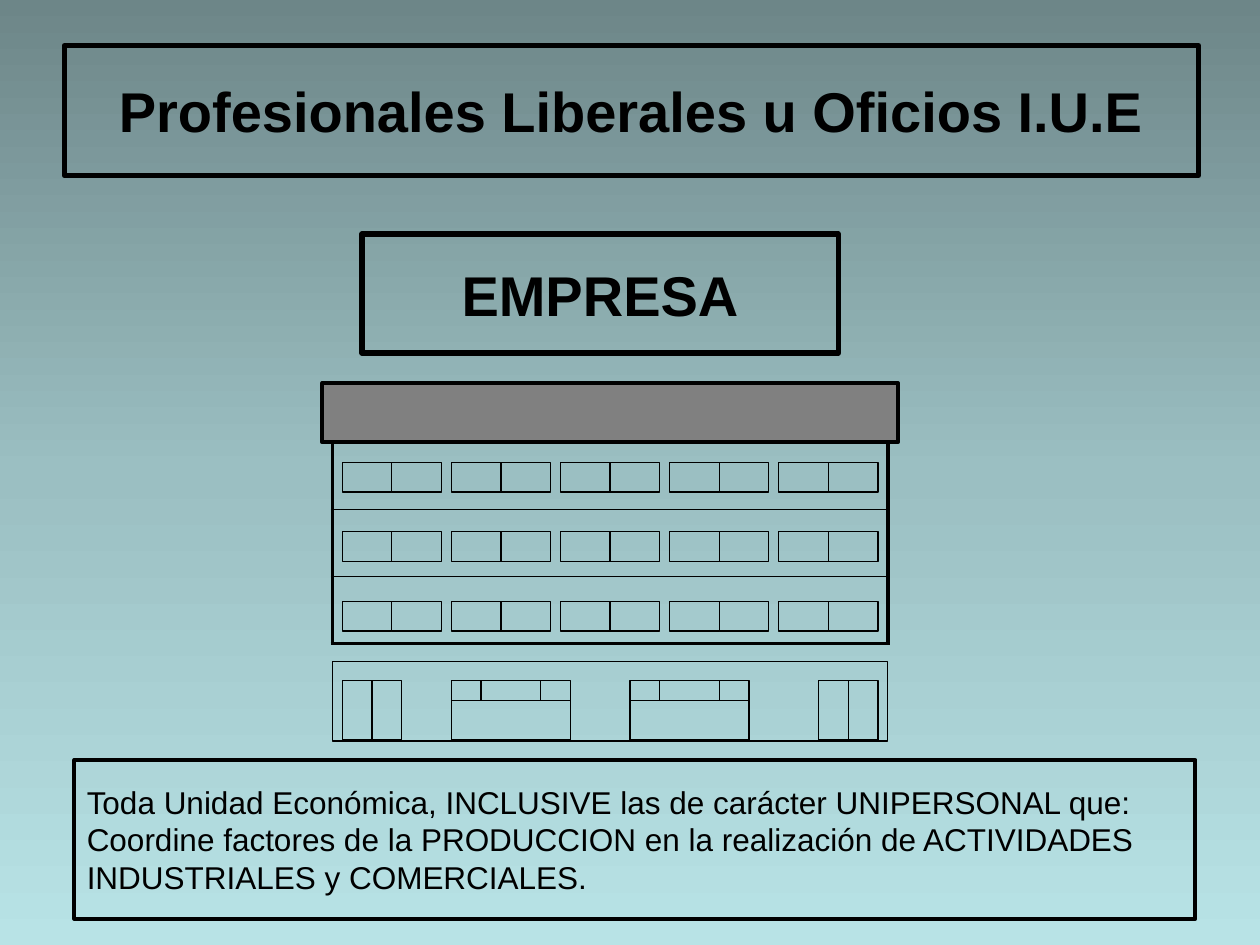
"""Build a slide that defines a company, with a drawn office building."""
import copy

import pptx
import pptx.dml.color
import pptx.enum.shapes
import pptx.enum.text
import pptx.oxml.ns
import pptx.util
from lxml import etree

Cm = pptx.util.Cm
Pt = pptx.util.Pt
qn = pptx.oxml.ns.qn
ALIGN = pptx.enum.text.PP_ALIGN

HUES = {"ink": "000000", "roof": "808080",
        "top": "6D8688", "mid": "9BBFC2", "base": "B8E3E6"}
HEAD = {"size": Pt(32), "bold": True, "name": "Arial"}
BODY = {"size": Pt(18), "bold": False, "name": "Arial"}
FRAME = {"word_wrap": True,
         "vertical_anchor": pptx.enum.text.MSO_ANCHOR.MIDDLE}
PLAIN = {"first_row": False, "horz_banding": False}


def hue(key):
    return pptx.dml.color.RGBColor.from_string(HUES[key])


def apply(item, style):
    for name, value in style.items():
        setattr(item, name, value)


def paint(slide):
    fill = slide.background.fill
    fill.gradient()
    fill.gradient_angle = 270
    stops = next(slide.element.iter(qn("a:gsLst")))
    stops.insert(1, copy.deepcopy(stops[0]))
    for stop, key, place in zip(fill.gradient_stops, ("top", "mid", "base"), (0, 0.5, 1)):
        stop.color.rgb = hue(key)
        stop.position = place


def box(slide, x, y, w, h, line=0.75, fill=None):
    shape = slide.shapes.add_shape(pptx.enum.shapes.MSO_SHAPE.RECTANGLE,
                                   Cm(x), Cm(y), Cm(w), Cm(h))
    shape.shadow.inherit = False
    if fill:
        shape.fill.solid()
        shape.fill.fore_color.rgb = hue(fill)
    else:
        shape.fill.background()
    shape.line.color.rgb = hue("ink")
    shape.line.width = Pt(line)
    return shape


def label(shape, lines, style, align):
    frame = shape.text_frame
    apply(frame, FRAME)
    frame.text = "\n".join(lines)
    for para in frame.paragraphs:
        para.alignment = align
        apply(para.font, style)
        para.font.color.rgb = hue("ink")


def edge(cell, side, width):
    props = cell._tc.get_or_add_tcPr()
    line = etree.SubElement(props, qn("a:ln" + side), w=str(Pt(width)))
    solid = etree.SubElement(line, qn("a:solidFill"))
    etree.SubElement(solid, qn("a:srgbClr"), val=HUES["ink"])


def floors(slide, x, y, w, h, count):
    table = slide.shapes.add_table(count, 1, Cm(x), Cm(y), Cm(w), Cm(h * count)).table
    apply(table, PLAIN)
    for i in range(count):
        cell = table.cell(i, 0)
        sides = {"L": 2.25, "R": 2.25, "T": 1 if i else 2.25,
                 "B": 1 if i < count - 1 else 2.25}
        for side, width in sides.items():
            edge(cell, side, width)
        cell.fill.background()


def panes(slide, x, y, widths, h):
    for w in widths:
        box(slide, x, y, w, h)
        x += w


def house(slide):
    box(slide, 6.5, 7.72, 11.6, 1.2, 2.25, "roof")
    floors(slide, 6.7, 8.92, 11.2, 1.35, 3)
    for row in range(3):
        for col in range(5):
            panes(slide, 6.9 + 2.2 * col, 9.32 + 1.4 * row, (1, 1), 0.6)
    box(slide, 6.7, 13.34, 11.2, 1.6)
    for x in (6.9, 16.5):
        panes(slide, x, 13.72, (0.6, 0.6), 1.2)
    for x in (9.1, 12.7):
        box(slide, x, 14.12, 2.4, 0.8)
        panes(slide, x, 13.72, (0.6, 1.2, 0.6), 0.4)


def main():
    deck = pptx.Presentation()
    deck.slide_width, deck.slide_height = Cm(25.4), Cm(19.05)
    slide = deck.slides.add_slide(deck.slide_layouts[6])
    paint(slide)
    label(box(slide, 1.3, 0.92, 22.86, 2.62, 3),
          ["Profesionales Liberales u Oficios I.U.E"], HEAD, ALIGN.CENTER)
    label(box(slide, 7.3, 4.72, 9.6, 2.4, 3), ["EMPRESA"], HEAD, ALIGN.CENTER)
    label(box(slide, 1.5, 15.32, 22.6, 3.2, 2.25),
          ["Toda Unidad Económica, INCLUSIVE las de carácter UNIPERSONAL que:",
           "Coordine factores de la PRODUCCION en la realización de ACTIVIDADES",
           "INDUSTRIALES y COMERCIALES."], BODY, ALIGN.LEFT)
    house(slide)
    deck.save("out.pptx")


if __name__ == "__main__":
    main()
